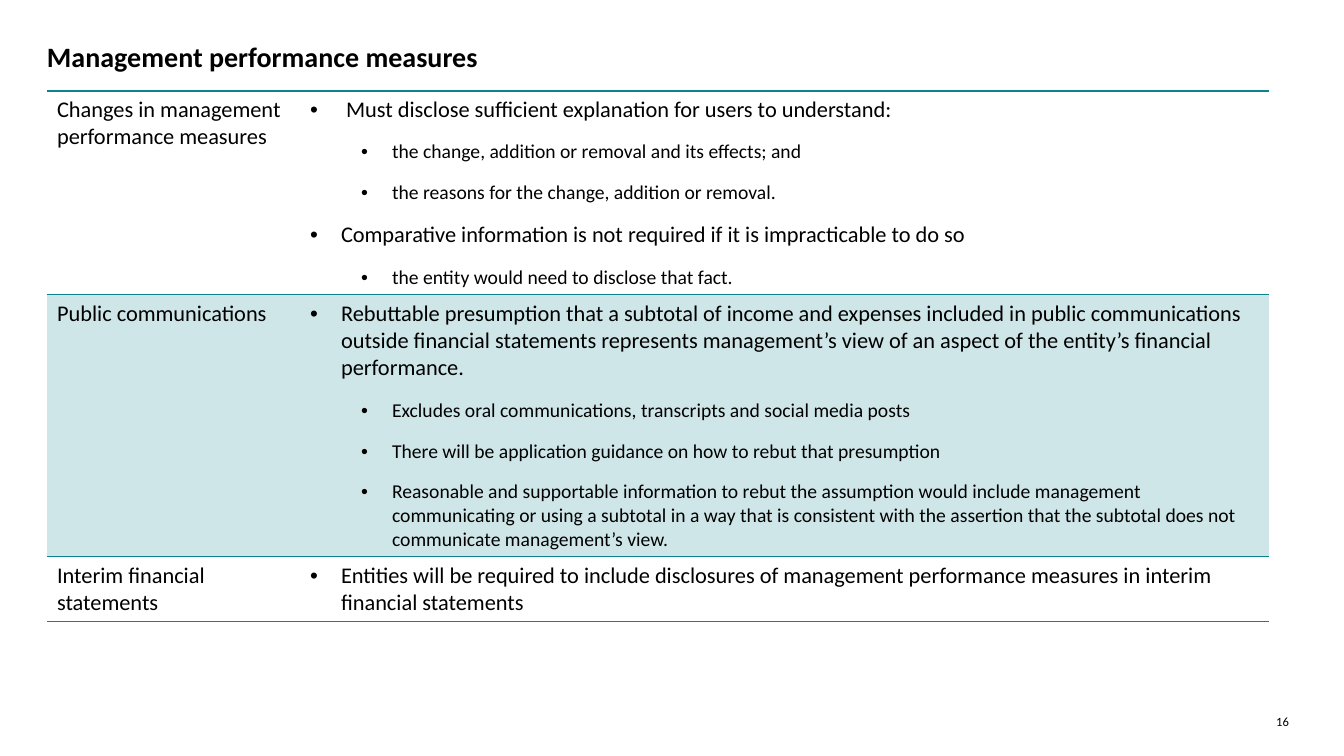
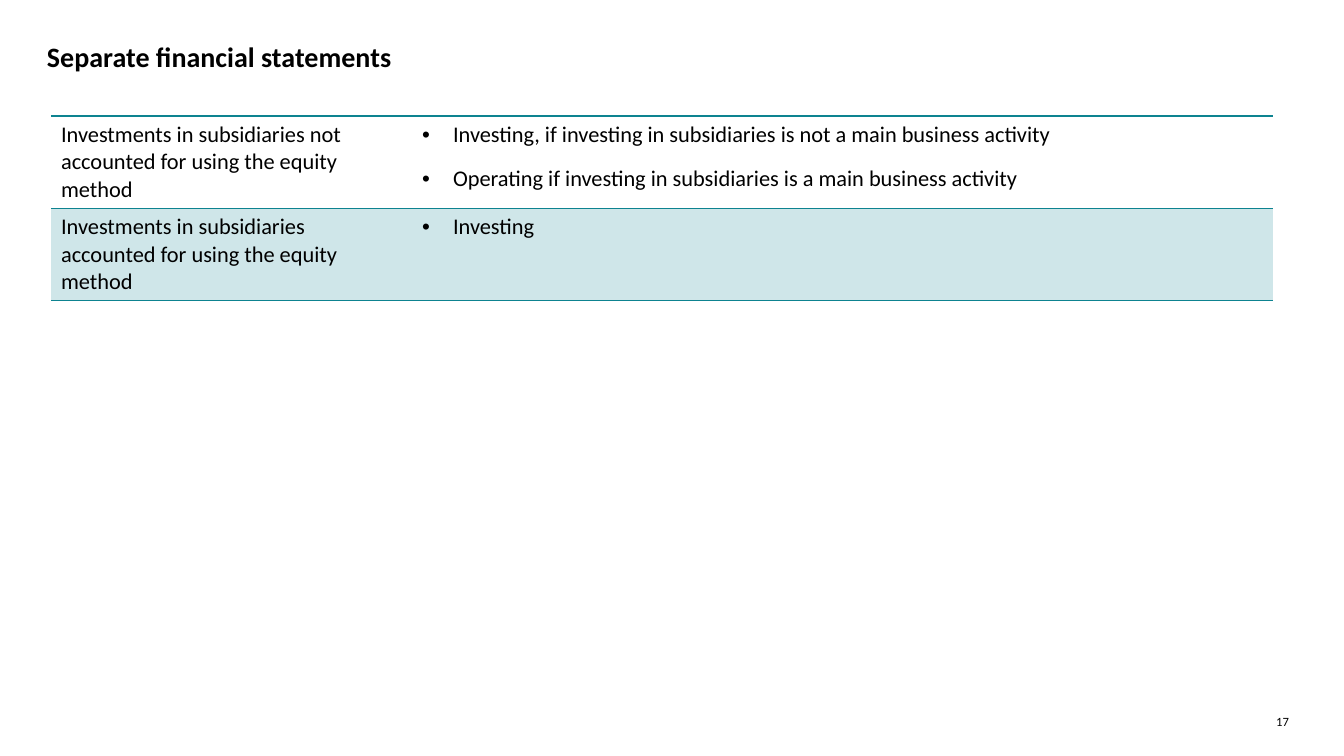
from dataclasses import dataclass

from lxml import etree
from pptx import Presentation
from pptx.dml.color import RGBColor
from pptx.enum import text
from pptx.oxml import ns
from pptx.util import Emu, Pt

PX = 914400 / 100.8


@dataclass(frozen=True)
class Theme:
    font: str = "Calibri"
    ink: str = "000000"
    rule: str = "0D8390"
    band: str = "CFE6E9"
    title: int = 20
    body: int = 16
    detail: int = 14
    number: int = 9
    gap: int = 6
    rule_width: int = 1


THEME = Theme()
SLIDE_SIZE = (1344, 756)
TITLE_BOX = (47, 39, 1231, 76)
NUMBER_BOX = (1255, 714, 34, 15)
FIRST_NUMBER = 16
HANGING = 31
LEVEL_STEP = 51
NO_STYLE = "{2D5ABB26-0587-4C30-8999-92F81FD0307C}"

SLIDES = [
    {
        "title": "Management performance measures",
        "origin": (47, 91),
        "columns": (253, 969),
        "heights": (203, 262, 65),
        "rows": [
            ("Changes in management performance measures", [
                (0, " Must disclose sufficient explanation for users to understand:"),
                (1, "the change, addition or removal and its effects; and"),
                (1, "the reasons for the change, addition or removal."),
                (0, "Comparative information is not required if it is impracticable to do so"),
                (1, "the entity would need to disclose that fact."),
            ]),
            ("Public communications", [
                (0, "Rebuttable presumption that a subtotal of income and expenses included in "
                    "public communications outside financial statements represents management’s "
                    "view of an aspect of the entity’s financial performance."),
                (1, "Excludes oral communications, transcripts and social media posts"),
                (1, "There will be application guidance on how to rebut that presumption"),
                (1, "Reasonable and supportable information to rebut the assumption would include "
                    "management communicating or using a subtotal in a way that is consistent with "
                    "the assertion that the subtotal does not communicate management’s view."),
            ]),
            ("Interim financial statements", [
                (0, "Entities will be required to include disclosures of management performance "
                    "measures in interim financial statements"),
            ]),
        ],
    },
    {
        "title": "Separate financial statements",
        "origin": (51, 116),
        "columns": (361, 861),
        "heights": (92, 92),
        "rows": [
            ("Investments in subsidiaries not accounted for using the equity method", [
                (0, "Investing, if investing in subsidiaries is not a main business activity"),
                (0, "Operating if investing in subsidiaries is a main business activity"),
            ]),
            ("Investments in subsidiaries accounted for using the equity method", [
                (0, "Investing"),
            ]),
        ],
    },
]


def px(length):
    return Emu(round(length * PX))


def add_xml(parent, tag, **attributes):
    return etree.SubElement(parent, ns.qn(tag), attributes)


def apply(target, formats):
    for name, value in formats.items():
        setattr(target, name, value)


def style(font, size, bold=False):
    apply(font, {"name": THEME.font, "size": Pt(size), "bold": bold})
    font.color.rgb = RGBColor.from_string(THEME.ink)


def prepare(frame, box_formats):
    apply(frame, {"margin_left": 0, "margin_right": 0, "margin_top": 0, "margin_bottom": 0,
                  "word_wrap": True, "auto_size": text.MSO_AUTO_SIZE.NONE,
                  "vertical_anchor": text.MSO_ANCHOR.TOP})
    apply(frame.paragraphs[0], box_formats)


def add_title(slide, wording):
    title = slide.shapes.title
    apply(title, dict(zip(("left", "top", "width", "height"), map(px, TITLE_BOX))))
    prepare(title.text_frame, {"text": wording, "alignment": text.PP_ALIGN.LEFT})
    style(title.text_frame.paragraphs[0].runs[0].font, THEME.title, bold=True)


def add_number(slide, number):
    frame = slide.shapes.add_textbox(*map(px, NUMBER_BOX)).text_frame
    prepare(frame, {"text": str(number), "alignment": text.PP_ALIGN.RIGHT})
    run = frame.paragraphs[0].runs[0]
    style(run.font, THEME.number)
    field = etree.Element(ns.qn("a:fld"), {
        "id": "{B6F15528-21DE-4FAA-801E-634DDDAF4B2B}", "type": "slidenum"})
    run_xml = run.font._element if hasattr(run.font, "_element") else run._r
    run_xml = run._r
    run_xml.getparent().replace(run_xml, field)
    field.extend(list(run_xml))


def add_bullet(paragraph, level):
    paragraph.level = level
    properties = paragraph._p.get_or_add_pPr()
    properties.set("marL", str(px(HANGING + level * LEVEL_STEP)))
    properties.set("indent", str(px(-HANGING)))
    add_xml(properties, "a:buFont", typeface="Arial")
    add_xml(properties, "a:buChar", char="•")


def write_cell(cell, items, bulleted):
    frame = cell.text_frame
    for index, (level, wording) in enumerate(items):
        paragraph = frame.add_paragraph() if index else frame.paragraphs[0]
        if bulleted:
            add_bullet(paragraph, level)
        apply(paragraph, {"space_before": Pt(THEME.gap if index else 0),
                          "space_after": Pt(THEME.gap)})
        run = paragraph.add_run()
        run.text = wording
        style(run.font, THEME.detail if level else THEME.body)


def paint_cell(cell, row, ruled):
    properties = cell._tc.get_or_add_tcPr()
    for tag, edge in (("a:lnT", row), ("a:lnB", row + 1)):
        if edge in ruled:
            line = add_xml(properties, tag, w=str(Pt(THEME.rule_width)))
            add_xml(add_xml(line, "a:solidFill"), "a:srgbClr", val=THEME.rule)
    if row % 2:
        cell.fill.solid()
        cell.fill.fore_color.rgb = RGBColor.from_string(THEME.band)
    else:
        cell.fill.background()


def add_topics(slide, content):
    rows, columns, heights = content["rows"], content["columns"], content["heights"]
    box = (*content["origin"], sum(columns), sum(heights))
    table = slide.shapes.add_table(len(rows), len(columns), *map(px, box)).table
    apply(table, {"first_row": False, "horz_banding": False})
    table._tbl.tblPr.find(ns.qn("a:tableStyleId")).text = NO_STYLE
    for column, width in zip(table.columns, columns):
        column.width = px(width)
    ruled = {0, 1, len(rows)}
    for index, ((topic, points), height) in enumerate(zip(rows, heights)):
        table.rows[index].height = px(height)
        write_cell(table.cell(index, 0), [(0, topic)], bulleted=False)
        write_cell(table.cell(index, 1), points, bulleted=True)
        for cell in table.rows[index].cells:
            paint_cell(cell, index, ruled)


def main():
    deck = Presentation()
    deck.slide_width, deck.slide_height = map(px, SLIDE_SIZE)
    deck.element.set("firstSlideNum", str(FIRST_NUMBER))
    for number, content in enumerate(SLIDES, FIRST_NUMBER):
        slide = deck.slides.add_slide(deck.slide_layouts[5])
        add_title(slide, content["title"])
        add_topics(slide, content)
        add_number(slide, number)
    deck.save("out.pptx")


if __name__ == "__main__":
    main()
